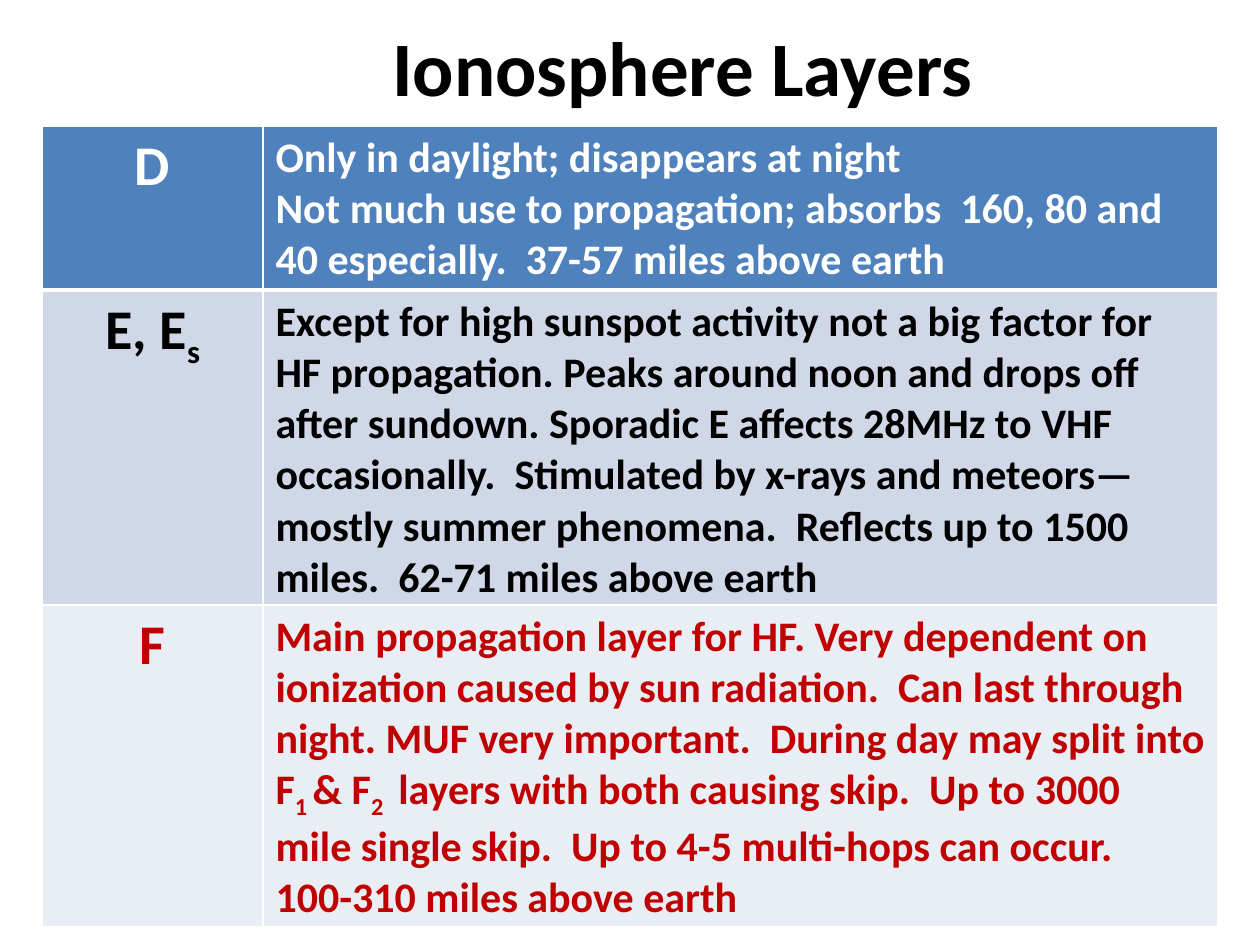
from lxml import etree
from pptx import Presentation
from pptx import util as u
from pptx.dml.color import RGBColor
from pptx.enum import text
from pptx.oxml import ns

FONT = "Calibri"
BLACK, WHITE, RED = "000000", "FFFFFF", "C00000"
SUBSCRIPT = "-25000"

# Each layer: fill, text colour, bottom rule in points, row height in cm,
# name runs, description paragraphs. A run is (words, is_subscript).
LAYERS = [
    ("4F81BD", WHITE, 3, 2.95, [("D", False)],
     [[("Only in daylight; disappears at night", False)],
      [("Not much use to propagation; absorbs  160, 80 and 40 especially.  "
        "37-57 miles above earth", False)]]),
    ("D0D8E8", BLACK, 1, 2.95, [("E, E", False), ("s", True)],
     [[("Except for high sunspot activity not a big factor for HF propagation. "
        "Peaks around noon and drops off after sundown. Sporadic E affects "
        "28MHz to VHF occasionally.  Stimulated by x-rays and meteors—mostly "
        "summer phenomena.  Reflects up to 1500 miles.  "
        "62-71 miles above earth", False)]]),
    ("E9EDF4", RED, 1, 6.05, [("F", False)],
     [[("Main propagation layer for HF. Very dependent on ionization caused by "
        "sun radiation.  Can last through night. MUF very important.  "
        "During day may split into F", False),
       ("1 ", True), ("& F", False), ("2 ", True),
       (" layers with both causing skip.  Up to 3000 mile single skip.  "
        "Up to 4-5 multi-hops can occur.  100-310 miles above earth", False)]]),
]


def rgb(hex_colour):
    return RGBColor.from_string(hex_colour)


def write(frame, paragraphs, size, colour, align):
    """Fill a text frame with bold paragraphs, run by run."""
    for index, runs in enumerate(paragraphs):
        paragraph = frame.add_paragraph() if index else frame.paragraphs[0]
        paragraph.alignment = align
        for words, is_subscript in runs:
            run = paragraph.add_run()
            run.text = words
            run.font.name, run.font.size, run.font.bold = FONT, u.Pt(size), True
            run.font.color.rgb = rgb(colour)
            if is_subscript:
                run.font._element.set("baseline", SUBSCRIPT)


def rule_cell(cell, top, bottom):
    """Draw white borders around a cell; widths are in points."""
    properties = cell._tc.get_or_add_tcPr()
    for side, width in (("L", 1), ("R", 1), ("T", top), ("B", bottom)):
        line = etree.SubElement(properties, ns.qn(f"a:ln{side}"), w=str(u.Pt(width)))
        fill = etree.SubElement(line, ns.qn("a:solidFill"))
        etree.SubElement(fill, ns.qn("a:srgbClr"), val=WHITE)


def add_title(slide, left, top, width, height):
    heading = slide.shapes.add_textbox(left, top, width, height).text_frame
    heading.word_wrap = True
    heading.vertical_anchor = text.MSO_ANCHOR.MIDDLE
    write(heading, [[("Ionosphere Layers", False)]], 44, BLACK, text.PP_ALIGN.CENTER)


def add_layer_table(slide, left, top, width, name_width):
    height = u.Cm(sum(layer[3] for layer in LAYERS))
    table = slide.shapes.add_table(len(LAYERS), 2, left, top, width, height).table
    table.columns[0].width = name_width
    table.columns[1].width = width - name_width

    rule_above = 1
    for row, layer in enumerate(LAYERS):
        fill, colour, rule_below, row_height, name, description = layer
        table.rows[row].height = u.Cm(row_height)
        contents = (([name], 32, text.PP_ALIGN.CENTER),
                    (description, 24, text.PP_ALIGN.LEFT))
        for column, (paragraphs, size, align) in enumerate(contents):
            cell = table.cell(row, column)
            rule_cell(cell, rule_above, rule_below)
            cell.fill.solid()
            cell.fill.fore_color.rgb = rgb(fill)
            write(cell.text_frame, paragraphs, size, colour, align)
        rule_above = rule_below


def main():
    deck = Presentation()
    deck.slide_width, deck.slide_height = u.Cm(25.4), u.Cm(19.05)
    slide = deck.slides.add_slide(deck.slide_layouts[6])
    # Heading
    add_title(slide, u.Cm(3.18), u.Cm(0), u.Cm(21.17), u.Cm(2.67))
    # Layers D, E and F
    add_layer_table(slide, u.Cm(0.85), u.Cm(2.54), u.Cm(23.7), u.Cm(4.45))
    deck.save("out.pptx")


if __name__ == "__main__":
    main()
